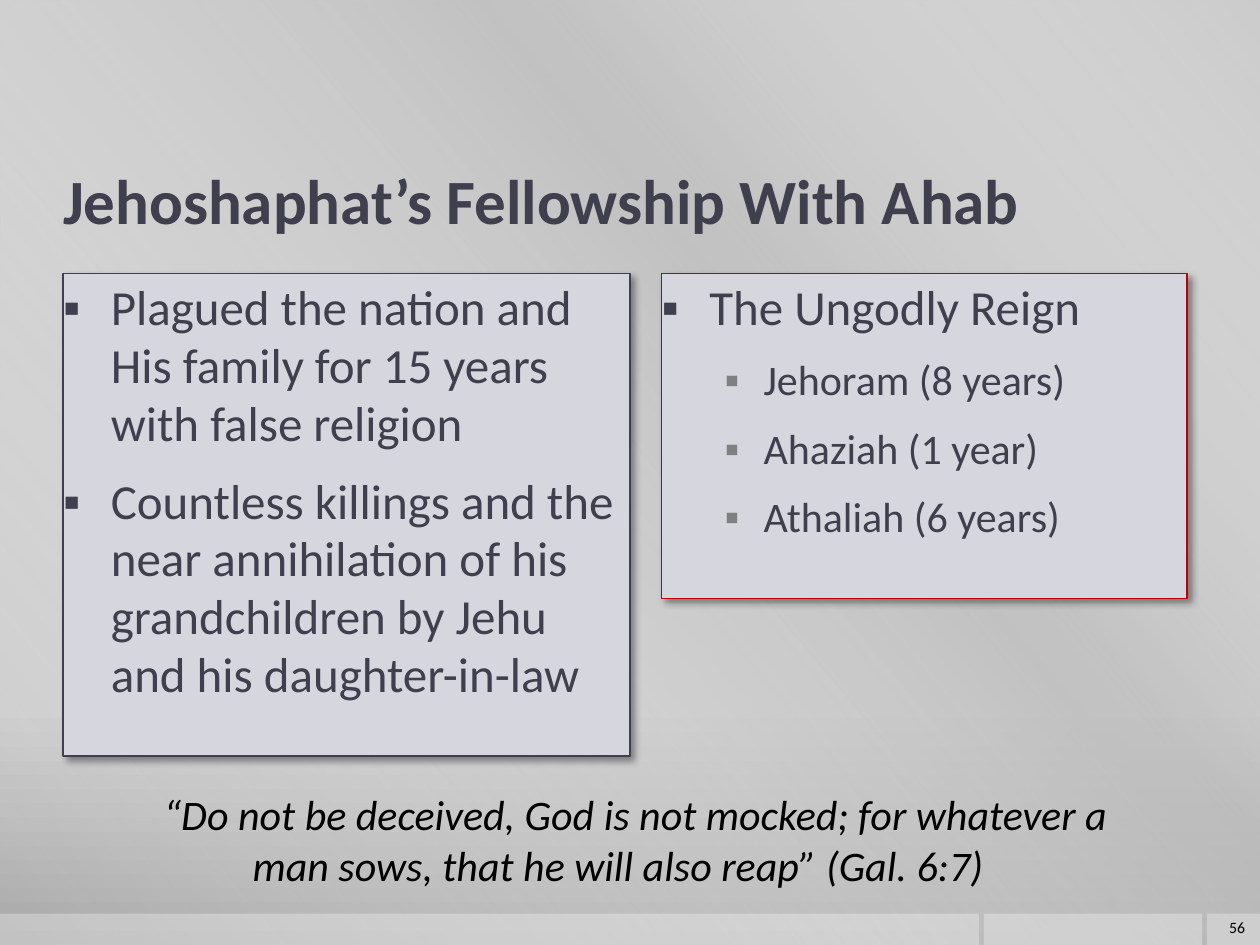
"""Build the slide on Jehoshaphat's fellowship with Ahab."""
from lxml.etree import SubElement
from pptx import Presentation
from pptx.dml.color import RGBColor
from pptx.enum.shapes import MSO_SHAPE
from pptx.enum.text import MSO_ANCHOR as Anchor, MSO_AUTO_SIZE as AutoSize, PP_ALIGN as Align
from pptx.oxml.ns import qn
from pptx.util import Inches, Pt

THEME = {
    "font": "Calibri", "ink": "3F3F4D", "black": "000000", "panel": "D6D6DE",
    "red": "C00000", "sub_bullet": "808080",
    "title": 36, "sizes": (28, 24), "quote": 24, "number": 9,
    "indents": ((0.38, 0.38), (0.81, 0.31)),
}
BACKDROP = [(0, "CBCBCB", 100), (76, "C8C8C8", 100), (100, "A7A7A7", 100)]
SHEEN = [(0, "FFFFFF", 0), (34, "BFBFBF", 61), (38, "BFBFBF", 76), (100, "FFFFFF", 0)]
FOOTER_BARS = [(0, 7.77), (7.81, 1.73), (9.58, 0.42)]

TITLE = "Jehoshaphat’s Fellowship With Ahab"
PANELS = [
    {"box": (0.5, 2.17, 4.5, 3.83), "border": THEME["ink"], "items": [
        (0, "Plagued the nation and His family for 15 years with false religion"),
        (0, "Countless killings and the near annihilation of his grandchildren by Jehu "
            "and his daughter-in-law")]},
    {"box": (5.25, 2.17, 4.17, 2.58), "border": THEME["red"], "items": [
        (0, "The Ungodly Reign"),
        (1, "Jehoram (8 years)"),
        (1, "Ahaziah (1 year)"),
        (1, "Athaliah (6 years)")]},
]
QUOTE = (" “Do not be deceived, God is not mocked; for whatever a man sows, "
         "that he will also reap” (Gal. 6:7)\t")
PAGE_NUMBER = "56"


def add_color(parent, color, alpha=100):
    node = SubElement(parent, qn("a:srgbClr"), val=color)
    if alpha < 100:
        SubElement(node, qn("a:alpha"), val=str(alpha * 1000))


def set_gradient(fill, owner, stops, angle):
    fill.gradient()
    gradient = owner.find(".//" + qn("a:gradFill"))
    for child in list(gradient):
        gradient.remove(child)
    stop_list = SubElement(gradient, qn("a:gsLst"))
    for position, color, alpha in stops:
        add_color(SubElement(stop_list, qn("a:gs"), pos=str(position * 1000)), color, alpha)
    SubElement(gradient, qn("a:lin"), ang=str(angle * 60000), scaled="0")


def place(shape, box):
    shape.left, shape.top, shape.width, shape.height = map(Inches, box)


def write(paragraph, text, size, color=THEME["ink"], bold=False, italic=False, align=Align.LEFT):
    paragraph.alignment = align
    run = paragraph.add_run()
    run.text = text
    font = run.font
    font.name, font.size, font.bold, font.italic = THEME["font"], Pt(size), bold, italic
    font.color.rgb = RGBColor.from_string(color)


def set_frame(shape, anchor=Anchor.TOP, side=0.0, auto_size=AutoSize.NONE):
    frame = shape.text_frame
    frame.word_wrap, frame.auto_size, frame.vertical_anchor = True, auto_size, anchor
    frame.margin_left = frame.margin_right = Inches(side)
    frame.margin_top = frame.margin_bottom = Inches(0.05)
    return frame


def add_backdrop(slide, width, height):
    set_gradient(slide.background.fill, slide.element, BACKDROP, 90)
    boxes = [(0, 0, width, height)] + [(left, 7.25, span, 0.25) for left, span in FOOTER_BARS]
    for order, box in enumerate(boxes):
        band = slide.shapes.add_shape(MSO_SHAPE.RECTANGLE, *map(Inches, box))
        band.shadow.inherit = False
        band.line.fill.background()
        if order == 0:
            set_gradient(band.fill, band.element, SHEEN, 140)
        else:
            band.fill.solid()
            band.fill.fore_color.rgb = RGBColor.from_string("FFFFFF")
            tint = band.element.spPr.find(qn("a:solidFill"))[0]
            SubElement(tint, qn("a:alpha"), val="30000")
        slide.shapes.element.insert(2 + order, band.element)


def add_bullet(paragraph, level, text):
    size = THEME["sizes"][level]
    margin, hang = THEME["indents"][level]
    paragraph.level = level
    paragraph.line_spacing = 0.98
    paragraph.space_before, paragraph.space_after = Pt(size * 0.2), Pt(6)
    write(paragraph, text, size)
    props = paragraph._p.get_or_add_pPr()
    props.set("marL", str(Inches(margin)))
    props.set("indent", str(-Inches(hang)))
    add_color(SubElement(props, qn("a:buClr")), THEME["sub_bullet"] if level else THEME["ink"])
    SubElement(props, qn("a:buChar"), char="▪")


def fill_panel(panel, box, border, items):
    place(panel, box)
    panel.fill.solid()
    panel.fill.fore_color.rgb = RGBColor.from_string(THEME["panel"])
    panel.line.color.rgb = RGBColor.from_string(border)
    panel.line.width = Pt(0.75)
    effects = SubElement(panel.element.spPr, qn("a:effectLst"))
    shadow = SubElement(effects, qn("a:outerShdw"), blurRad=str(Pt(4)), dist=str(Pt(3)),
                        dir=str(45 * 60000), algn="tl", rotWithShape="0")
    add_color(shadow, THEME["black"], 40)
    frame = set_frame(panel)
    for order, (level, text) in enumerate(items):
        add_bullet(frame.add_paragraph() if order else frame.paragraphs[0], level, text)


def main():
    deck = Presentation()
    deck.slide_width, deck.slide_height = Inches(10), Inches(7.5)
    slide = deck.slides.add_slide(deck.slide_layouts[3])
    add_backdrop(slide, 10, 7.5)

    title, *bodies = slide.placeholders
    place(title, (0.5, 1.08, 9, 1))
    write(set_frame(title, Anchor.MIDDLE).paragraphs[0], TITLE, THEME["title"], bold=True)
    for body, panel in zip(bodies, PANELS):
        fill_panel(body, **panel)

    quote = slide.shapes.add_textbox(*map(Inches, (0.92, 6.21, 8.17, 0.91)))
    write(set_frame(quote, side=0.1, auto_size=AutoSize.SHAPE_TO_FIT_TEXT).paragraphs[0],
          QUOTE, THEME["quote"], THEME["black"], italic=True, align=Align.CENTER)
    number = slide.shapes.add_textbox(*map(Inches, (9.56, 7.23, 0.42, 0.25)))
    write(set_frame(number, Anchor.MIDDLE, side=0.1).paragraphs[0],
          PAGE_NUMBER, THEME["number"], THEME["black"], align=Align.RIGHT)
    deck.save("out.pptx")


if __name__ == "__main__":
    main()
